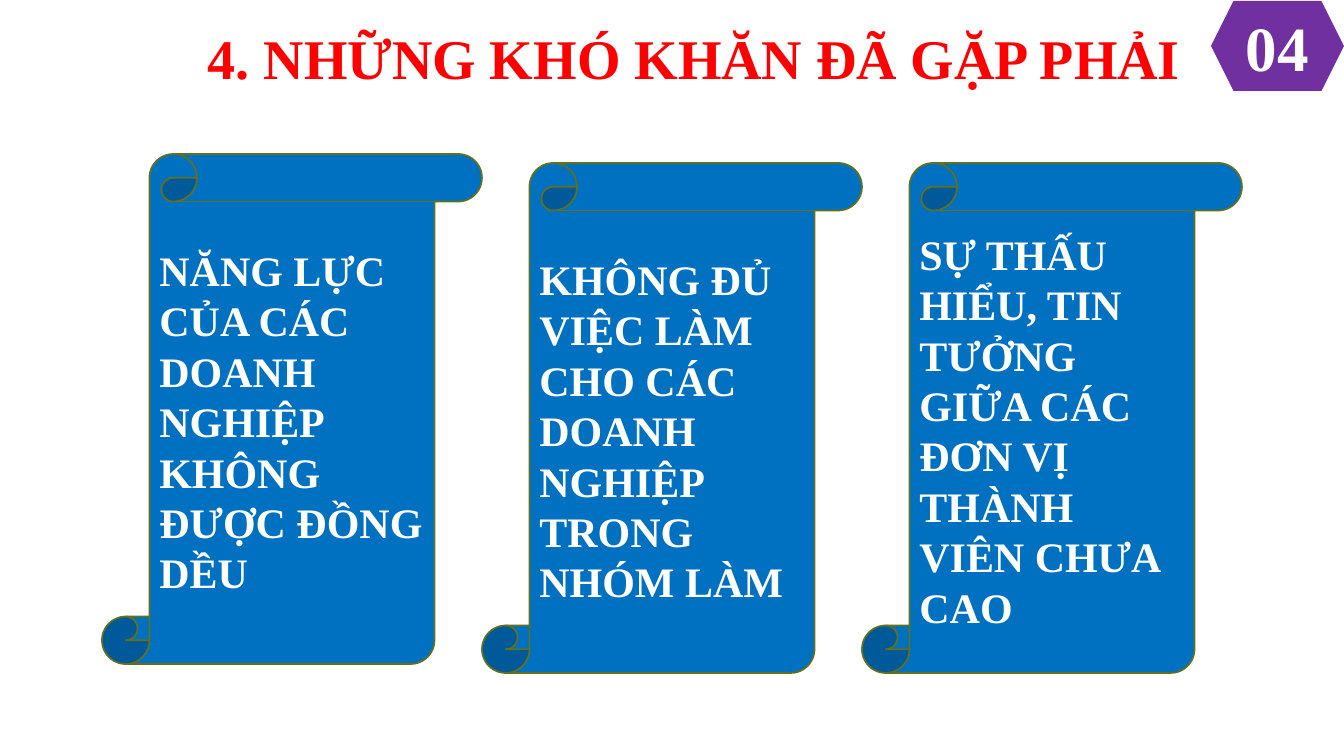
from dataclasses import dataclass
from pptx import Presentation
from pptx.dml.color import RGBColor
from pptx.enum.shapes import MSO_SHAPE
from pptx.enum.text import MSO_ANCHOR, PP_ALIGN
from pptx.util import Emu, Pt


@dataclass(frozen=True)
class Theme:
    font: str = "Times New Roman"
    paper: str = "FFFFFF"
    title: str = "FF0000"
    badge: str = "7030A0"
    scroll: str = "0070C0"
    outline: str = "61711F"
    title_size: int = 40
    badge_size: int = 45
    scroll_size: int = 30
    outline_width: float = 1.25


THEME = Theme()
PAGE_SIZE = (1344, 756)
TITLE_BOX = (89, 32, 1210, 90)
BADGE_BOX = (1211, 1, 133, 90)
SCROLLS_BOX = (102, 154, 1140, 519)
SCROLL_HEIGHT = 510
DIFFICULTIES = [
    ("NĂNG LỰC CỦA CÁC DOANH NGHIỆP KHÔNG ĐƯỢC ĐỒNG DỀU", 0),
    ("KHÔNG ĐỦ VIỆC LÀM CHO CÁC DOANH NGHIỆP TRONG NHÓM LÀM", 9),
    ("SỰ THẤU HIỂU, TIN TƯỞNG GIỮA CÁC ĐƠN VỊ THÀNH VIÊN CHƯA CAO", 9),
]


def px(length):
    return Emu(round(length * 914400 / 100.8))


def color(code):
    return RGBColor.from_string(code)


def write(shape, text, *, size, ink=THEME.paper, align=PP_ALIGN.LEFT,
          anchor=MSO_ANCHOR.MIDDLE, spacing=None):
    frame = shape.text_frame
    frame.word_wrap = True
    frame.vertical_anchor = anchor
    para = frame.paragraphs[0]
    para.alignment = align
    para.line_spacing = spacing
    span = para.add_run()
    span.text = text
    span.font.name = THEME.font
    span.font.size = Pt(size)
    span.font.bold = True
    span.font.color.rgb = color(ink)


def add_filled_shape(page, kind, box, fill):
    shape = page.shapes.add_shape(kind, *map(px, box))
    shape.shadow.inherit = False
    shape.fill.solid()
    shape.fill.fore_color.rgb = color(fill)
    shape.line.fill.background()
    return shape


def add_title(page, box, text):
    title = page.shapes.add_textbox(*map(px, box))
    write(title, text, size=THEME.title_size, ink=THEME.title,
          align=PP_ALIGN.CENTER, anchor=MSO_ANCHOR.TOP, spacing=0.8)


def add_badge(page, box, text):
    badge = add_filled_shape(page, MSO_SHAPE.HEXAGON, box, THEME.badge)
    write(badge, text, size=THEME.badge_size, align=PP_ALIGN.CENTER)


def add_scrolls(page, box, difficulties):
    left, top, width, _ = box
    pitch = width // len(difficulties)
    for index, (text, drop) in enumerate(difficulties):
        scroll_box = (left + index * pitch, top + drop, pitch, SCROLL_HEIGHT)
        scroll = add_filled_shape(page, MSO_SHAPE.VERTICAL_SCROLL, scroll_box, THEME.scroll)
        scroll.line.color.rgb = color(THEME.outline)
        scroll.line.width = Pt(THEME.outline_width)
        write(scroll, text, size=THEME.scroll_size)


def main():
    deck = Presentation()
    deck.slide_width, deck.slide_height = map(px, PAGE_SIZE)
    page = deck.slides.add_slide(deck.slide_layouts[6])
    page.background.fill.solid()
    page.background.fill.fore_color.rgb = color(THEME.paper)
    add_title(page, TITLE_BOX, "4. NHỮNG KHÓ KHĂN ĐÃ GẶP PHẢI")
    add_badge(page, BADGE_BOX, "04")
    add_scrolls(page, SCROLLS_BOX, DIFFICULTIES)
    deck.save("out.pptx")


if __name__ == "__main__":
    main()
